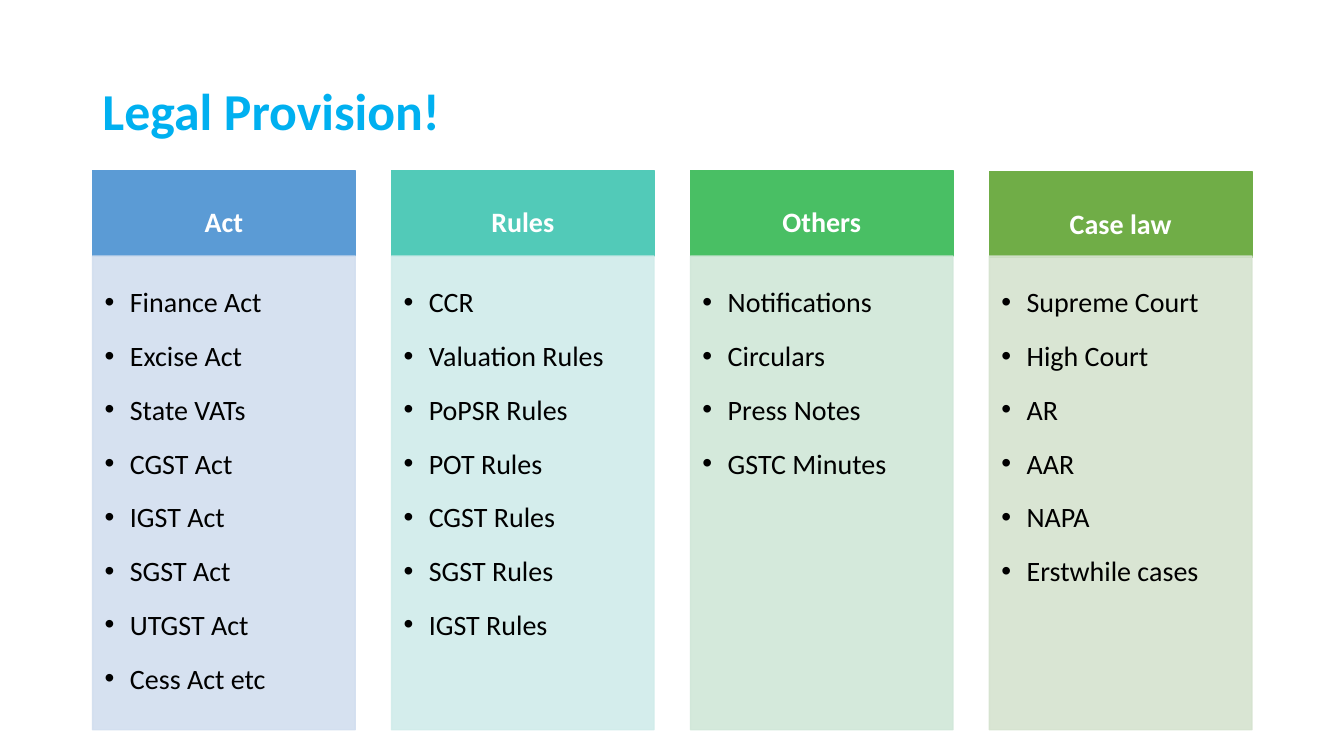
from lxml import etree
from pptx import Presentation
from pptx.dml.color import RGBColor
from pptx.enum.shapes import MSO_SHAPE
from pptx.enum.text import MSO_ANCHOR, MSO_AUTO_SIZE, PP_ALIGN
from pptx.oxml.ns import qn
from pptx.util import Pt

RECTANGLE = MSO_SHAPE.RECTANGLE
TOP, MIDDLE = MSO_ANCHOR.TOP, MSO_ANCHOR.MIDDLE
LEFT, CENTER = PP_ALIGN.LEFT, PP_ALIGN.CENTER

FONT = "Calibri"
SKY = RGBColor(0x00, 0xB0, 0xF0)
WHITE = RGBColor(0xFF, 0xFF, 0xFF)
BLACK = RGBColor(0x00, 0x00, 0x00)
BLUE, PALE_BLUE = RGBColor(0x5B, 0x9B, 0xD5), RGBColor(0xD2, 0xDE, 0xEF)
TEAL, PALE_TEAL = RGBColor(0x52, 0xCA, 0xB8), RGBColor(0xD0, 0xEC, 0xEA)
GREEN, PALE_GREEN = RGBColor(0x49, 0xBF, 0x64), RGBColor(0xD0, 0xE7, 0xD8)
OLIVE, PALE_OLIVE = RGBColor(0x70, 0xAD, 0x47), RGBColor(0xD5, 0xE3, 0xCF)

TITLE = "Legal Provision!"
# Heading, heading colour, body colour, heading top, items
COLUMNS = [
    ("Act", BLUE, PALE_BLUE, 121.7,
     ["Finance Act", "Excise Act", "State VATs", "CGST Act",
      "IGST Act", "SGST Act", "UTGST Act", "Cess Act etc"]),
    ("Rules", TEAL, PALE_TEAL, 121.7,
     ["CCR", "Valuation Rules", "PoPSR Rules", "POT Rules",
      "CGST Rules", "SGST Rules", "IGST Rules"]),
    ("Others", GREEN, PALE_GREEN, 121.7,
     ["Notifications", "Circulars", "Press Notes", "GSTC Minutes"]),
    ("Case law", OLIVE, PALE_OLIVE, 122.7,
     ["Supreme Court", "High Court", "AR", "AAR", "NAPA", "Erstwhile cases"]),
]

COLUMN_LEFT, COLUMN_PITCH, COLUMN_WIDTH = 66.2, 213.5, 187.5
HEADING_HEIGHT = 61.2
BODY_TOP, BODY_HEIGHT = 182.9, 338.4
HEADING_INSETS = (11.5, 6.5, 11.5, 6.5)
BODY_INSETS = (8.6, 8.6, 11.5, 12.2)
BULLET_INDENT = 18


def add_bullet(paragraph):
    properties = paragraph._p.get_or_add_pPr()
    properties.set("marL", str(Pt(BULLET_INDENT)))
    properties.set("indent", str(-Pt(BULLET_INDENT)))
    etree.SubElement(properties, qn("a:buFont"), typeface="Arial")
    etree.SubElement(properties, qn("a:buChar"), char="•")


def write_text(shape, lines, size=20, color=BLACK, bold=False, align=LEFT,
               anchor=MIDDLE, insets=None, spacing=1.5, after=0, bullets=False):
    frame = shape.text_frame
    frame.word_wrap = True
    frame.auto_size = MSO_AUTO_SIZE.NONE
    frame.vertical_anchor = anchor
    if insets:
        (frame.margin_left, frame.margin_top,
         frame.margin_right, frame.margin_bottom) = map(Pt, insets)
    frame.text = "\n".join(lines)
    for paragraph in frame.paragraphs:
        paragraph.alignment = align
        paragraph.line_spacing = spacing
        paragraph.space_before = Pt(0)
        paragraph.space_after = Pt(after)
        if bullets:
            add_bullet(paragraph)
        font = paragraph.runs[0].font
        font.name, font.size, font.bold = FONT, Pt(size), bold
        font.color.rgb = color


def add_panel(slide, left, top, height, color, opacity=100):
    panel = slide.shapes.add_shape(
        RECTANGLE, Pt(left), Pt(top), Pt(COLUMN_WIDTH), Pt(height))
    panel.shadow.inherit = False
    panel.fill.solid()
    panel.fill.fore_color.rgb = color
    panel.line.color.rgb = color
    panel.line.width = Pt(1)
    if opacity < 100:
        for color_element in panel._element.spPr.iter(qn("a:srgbClr")):
            etree.SubElement(color_element, qn("a:alpha"), val=str(opacity * 1000))
    return panel


def main():
    presentation = Presentation()
    presentation.slide_width, presentation.slide_height = Pt(960), Pt(540)
    slide = presentation.slides.add_slide(presentation.slide_layouts[5])

    title = slide.shapes.title
    title.left, title.top, title.width, title.height = map(Pt, (66, 28.8, 828, 104.4))
    write_text(title, [TITLE], size=37, color=SKY, bold=True, spacing=0.9)

    for index, (heading, color, pale, heading_top, items) in enumerate(COLUMNS):
        left = COLUMN_LEFT + index * COLUMN_PITCH
        header = add_panel(slide, left, heading_top, HEADING_HEIGHT, color)
        write_text(header, [heading], color=WHITE, bold=True, align=CENTER,
                   insets=HEADING_INSETS)
        body = add_panel(slide, left, BODY_TOP, BODY_HEIGHT, pale, opacity=90)
        write_text(body, items, anchor=TOP, insets=BODY_INSETS, after=2.4,
                   bullets=True)

    presentation.save("out.pptx")


if __name__ == "__main__":
    main()
